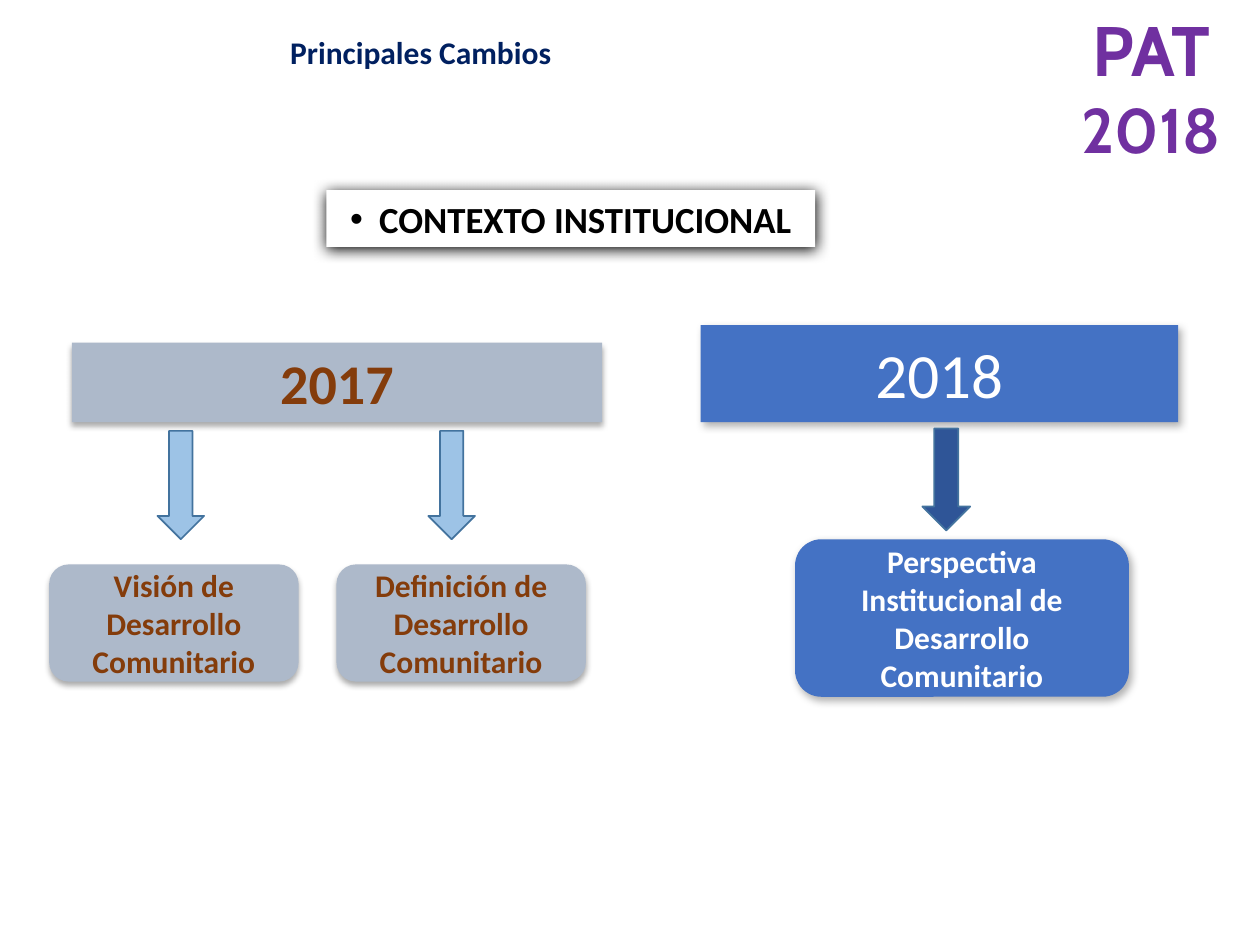
from pptx import Presentation
from pptx import util as u
from pptx.dml.color import RGBColor
from pptx.enum import shapes, text
from pptx.oxml import parse_xml
from pptx.oxml.ns import nsdecls, qn

THEME = {
    "body": "Calibri", "badge": "Cabin",
    "navy": "002060", "purple": "7030A0", "brown": "843C0B",
    "grey": "ADB9CA", "blue": "4472C4", "white": "FFFFFF", "black": "000000",
    "sky": "9DC3E6", "deep": "2F5597", "edge": "43739E",
    "small": 18, "context": 21, "year": 32, "big": 36, "huge": 40,
}
# Shadows: opacity %, blur pt, distance pt, angle in degrees
SOFT, SLANTED, STRONG = (32, 3.5, 2.2, 90), (30, 4.5, 2.6, 53), (100, 8.5, 1, 90)
RECT, ROUND = shapes.MSO_SHAPE.RECTANGLE, shapes.MSO_SHAPE.ROUNDED_RECTANGLE

# Text: (words, size, colour, bold, font)
BADGE = [("PAT", "huge", "purple", True, "badge"),
         (" 2018", "big", "purple", True, "badge")]
TITLE = [("Principales Cambios", "small", "navy", True, "body")]
CONTEXT = [("CONTEXTO INSTITUCIONAL", "context", "black", True, "body")]

# One group per year: look, then (preset, place, words, size, bold)
YEARS = [
    {"fill": "grey", "ink": "brown", "shadow": SOFT, "cards": [
        (ROUND, (0.39, 4.48, 1.98, 0.93), "Visión de Desarrollo Comunitario", "small", True),
        (ROUND, (2.67, 4.48, 1.98, 0.93), "Definición de Desarrollo Comunitario", "small", True),
        (RECT, (0.57, 2.72, 4.21, 0.63), "2017", "year", True)]},
    {"fill": "blue", "ink": "white", "shadow": SLANTED, "cards": [
        (ROUND, (6.31, 4.28, 2.65, 1.25),
         "Perspectiva Institucional de Desarrollo Comunitario", "small", True),
        (RECT, (5.56, 2.58, 3.79, 0.77), "2018", "big", False)]},
]
ARROWS = [((1.25, 3.42, 0.37, 0.86), "sky"), ((3.4, 3.42, 0.37, 0.86), "sky"),
          ((7.32, 3.4, 0.38, 0.81), "deep")]


def color(name):
    return RGBColor.from_string(THEME[name])


def inches(place):
    return [u.Inches(value) for value in place]


def set_attributes(target, values):
    for name, value in values.items():
        setattr(target, name, value)


def write(box, spans, anchor=text.MSO_ANCHOR.TOP):
    set_attributes(box.text_frame, {"word_wrap": True, "vertical_anchor": anchor})
    para = box.text_frame.paragraphs[0]
    para.alignment = text.PP_ALIGN.CENTER
    for words, size, ink, bold, font in spans:
        span = para.add_run()
        span.text = words
        set_attributes(span.font, {"name": THEME[font], "size": u.Pt(THEME[size]), "bold": bold})
        span.font.color.rgb = color(ink)
    return para


def add_filled(parent, preset, place, fill, shadow=None):
    shape = parent.add_shape(preset, *inches(place))
    shape.fill.solid()
    shape.fill.fore_color.rgb = color(fill)
    shape.line.fill.background()
    shape.shadow.inherit = False
    if shadow:
        opacity, blur, distance, angle = shadow
        effects = shape.element.spPr.find(qn("a:effectLst"))
        effects.append(parse_xml(
            f'<a:outerShdw {nsdecls("a")} blurRad="{u.Pt(blur)}" dist="{u.Pt(distance)}" '
            f'dir="{angle * 60000}" algn="ctr" rotWithShape="0"><a:srgbClr val="{THEME["black"]}">'
            f'<a:alpha val="{opacity * 1000}"/></a:srgbClr></a:outerShdw>'))
    return shape


def main():
    deck = Presentation()
    set_attributes(deck, {"slide_width": u.Inches(10), "slide_height": u.Inches(7.5)})
    page = deck.slides.add_slide(deck.slide_layouts[6])

    # Corner badge and title
    write(page.shapes.add_textbox(*inches((8.27, 0, 1.73, 1.38))), BADGE)
    title = write(page.shapes.add_textbox(*inches((2.17, 0.25, 2.34, 0.48))), TITLE)
    title.line_spacing = 0.9

    # Year headings with their cards
    for year in YEARS:
        group = page.shapes.add_group_shape()
        for preset, place, words, size, bold in year["cards"]:
            card = add_filled(group.shapes, preset, place, year["fill"], year["shadow"])
            write(card, [(words, size, year["ink"], bold, "body")], text.MSO_ANCHOR.MIDDLE)

    # Bulleted context heading
    context = add_filled(page.shapes, RECT, (2.59, 1.51, 3.88, 0.45), "white", STRONG)
    properties = write(context, CONTEXT)._p.get_or_add_pPr()
    properties.set("marL", str(u.Inches(0.23)))
    properties.set("indent", str(u.Inches(-0.23)))
    properties.append(parse_xml(f'<a:buFont {nsdecls("a")} typeface="Arial"/>'))
    properties.append(parse_xml(f'<a:buChar {nsdecls("a")} char="•"/>'))

    # Arrows from headings to cards
    for place, fill in ARROWS:
        arrow = add_filled(page.shapes, shapes.MSO_SHAPE.DOWN_ARROW, place, fill)
        arrow.line.color.rgb = color("edge")
        arrow.line.width = u.Pt(1)

    deck.save("out.pptx")


if __name__ == "__main__":
    main()
